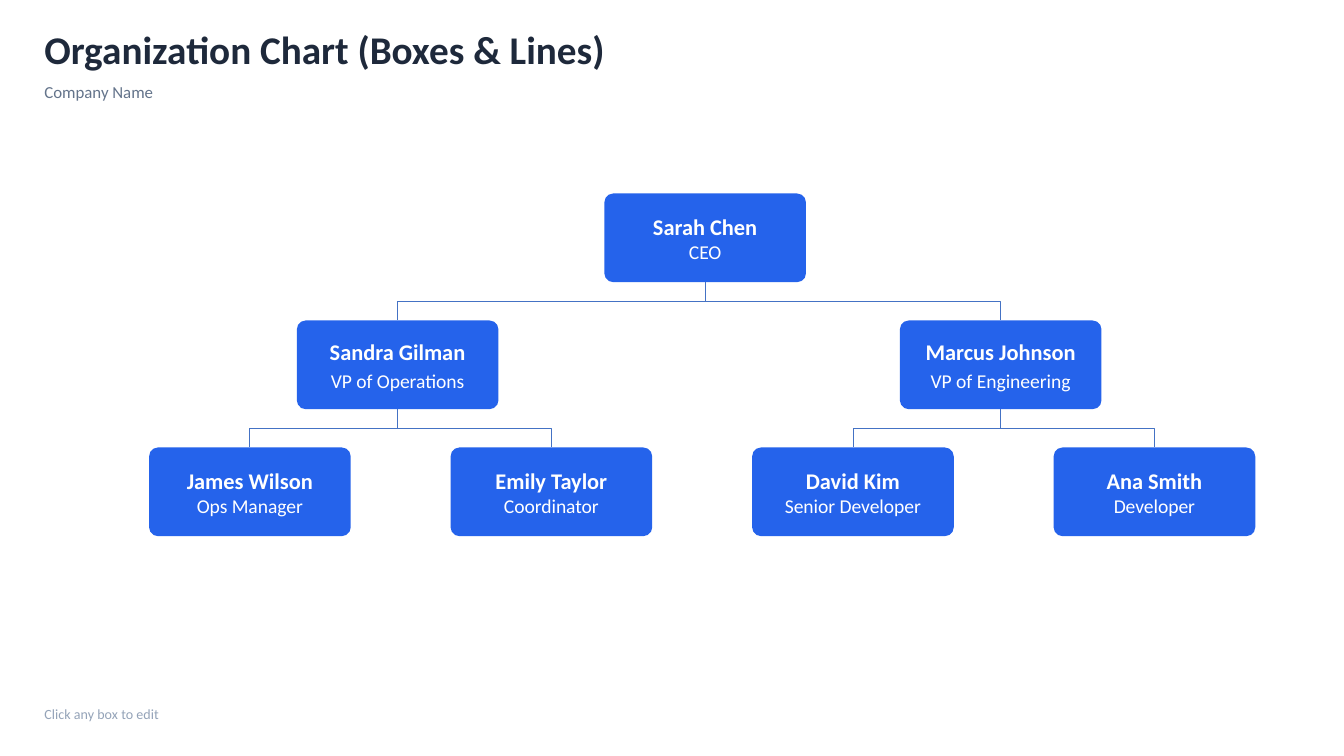
from copy import deepcopy
from dataclasses import dataclass

from lxml import etree
from pptx import Presentation
from pptx import util as u
from pptx.dml.color import RGBColor
from pptx.enum import shapes, text
from pptx.oxml.ns import qn


@dataclass(frozen=True)
class Theme:
    font: str = "Calibri"
    title: str = "1E293B"
    subtitle: str = "64748B"
    note: str = "94A3B8"
    box: str = "2563EB"
    box_text: str = "FFFFFF"
    line: str = "4472C4"
    title_size: float = 21
    subtitle_size: float = 9
    note_size: float = 7.5
    name_size: float = 12
    role_size: float = 10.5
    line_width: float = 0.5


@dataclass(frozen=True)
class Box:
    left: float
    top: float
    width: float
    height: float

    def emu(self):
        return [u.Inches(n) for n in (self.left, self.top, self.width, self.height)]


@dataclass(frozen=True)
class Person:
    name: str
    role: str
    column: float
    reports: tuple = ()


THEME = Theme()
SLIDE = Box(0, 0, 10, 10 * 9 / 16)
MARGIN = 0.33
CHART = Box(1.11, 1.44, 8.23, 2.55)
CARD_WIDTH, CARD_HEIGHT = 1.5, 0.66
COLUMNS, ROWS = 4, 3
MANAGER_SPACING = 14.7

STAFF = Person("Sarah Chen", "CEO", 1.51, (
    Person("Sandra Gilman", "VP of Operations", 0.49, (
        Person("James Wilson", "Ops Manager", 0),
        Person("Emily Taylor", "Coordinator", 1))),
    Person("Marcus Johnson", "VP of Engineering", 2.49, (
        Person("David Kim", "Senior Developer", 2),
        Person("Ana Smith", "Developer", 3)))))


def add_run(paragraph, words, *, size, color, bold=False):
    run = paragraph.add_run()
    run.text = words
    run.font.name = THEME.font
    run.font.size = u.Pt(size)
    run.font.bold = bold
    run.font.color.rgb = RGBColor.from_string(color)
    return run


def add_label(slide, box, words, *, spacing, **format):
    frame = slide.shapes.add_textbox(*box.emu()).text_frame
    frame.word_wrap = True
    frame.margin_left = frame.margin_right = frame.margin_top = frame.margin_bottom = 0
    paragraph = frame.paragraphs[0]
    paragraph.line_spacing = u.Pt(spacing)
    add_run(paragraph, words, **format)


def add_header(slide, box):
    add_label(slide, Box(box.left, box.top, box.width / 2, 0.29),
              "Organization Chart (Boxes & Lines)", spacing=21,
              size=THEME.title_size, color=THEME.title, bold=True)
    add_label(slide, Box(box.left, box.top + 0.33, box.width, 0.17),
              "Company Name", spacing=12.6,
              size=THEME.subtitle_size, color=THEME.subtitle)


def add_footer(slide, box):
    add_label(slide, box, "Click any box to edit", spacing=10.5,
              size=THEME.note_size, color=THEME.note)


def add_card(slide, box, person, spacing=None):
    card = slide.shapes.add_shape(shapes.MSO_SHAPE.ROUNDED_RECTANGLE, *box.emu())
    card.adjustments[0] = 0.1
    card.shadow.inherit = False
    card.fill.solid()
    card.fill.fore_color.rgb = RGBColor.from_string(THEME.box)
    card.line.fill.background()
    card.text_frame.word_wrap = True
    card.text_frame.vertical_anchor = text.MSO_ANCHOR.MIDDLE
    paragraph = card.text_frame.paragraphs[0]
    paragraph.alignment = text.PP_ALIGN.CENTER
    if spacing:
        paragraph.line_spacing = u.Pt(spacing)
        paragraph.space_after = u.Pt(3)
    name = add_run(paragraph, person.name, size=THEME.name_size,
                   color=THEME.box_text, bold=True)
    paragraph.add_line_break()
    # The break takes the name's format, so that it does not heighten the line.
    paragraph._p[-1].append(deepcopy(name._r.rPr))
    add_run(paragraph, person.role, size=THEME.role_size, color=THEME.box_text)
    return card


def join_cards(slide, upper, lower):
    """Draw a down-across-down elbow from the upper card to the lower one."""
    start_x, start_y = upper.left + upper.width // 2, upper.top + upper.height
    end_x, end_y = lower.left + lower.width // 2, lower.top
    elbow = slide.shapes.add_connector(shapes.MSO_CONNECTOR.ELBOW,
                                       start_x, start_y, end_x, end_y)
    elbow.begin_connect(upper, 2)
    elbow.end_connect(lower, 0)
    # A preset elbow leaves sideways: turn it about its centre to leave downwards.
    elbow.width, elbow.height = end_y - start_y, abs(end_x - start_x)
    elbow.left = (start_x + end_x - elbow.width) // 2
    elbow.top = (start_y + end_y - elbow.height) // 2
    to_right = end_x > start_x
    properties = elbow._element.spPr
    transform = properties.find(qn("a:xfrm"))
    transform.set("rot", str((270 if to_right else 90) * 60000))
    transform.set("flipH", str(int(to_right)))
    transform.set("flipV", "0")
    elbow.line.color.rgb = RGBColor.from_string(THEME.line)
    elbow.line.width = u.Pt(THEME.line_width)
    etree.SubElement(properties, qn("a:effectLst"))


def add_branch(slide, box, person, row=0):
    """Place a person's card on the grid of the box, and all reports below it."""
    column_step = (box.width - CARD_WIDTH) / (COLUMNS - 1)
    row_step = (box.height - CARD_HEIGHT) / (ROWS - 1)
    place = Box(box.left + person.column * column_step, box.top + row * row_step,
                CARD_WIDTH, CARD_HEIGHT)
    card = add_card(slide, place, person, MANAGER_SPACING if row == 1 else None)
    for report in person.reports:
        join_cards(slide, card, add_branch(slide, box, report, row + 1))
    return card


def main():
    presentation = Presentation()
    presentation.slide_width = u.Inches(SLIDE.width)
    presentation.slide_height = u.Inches(SLIDE.height)
    slide = presentation.slides.add_slide(presentation.slide_layouts[6])
    text_width = 9.52
    add_header(slide, Box(MARGIN, 0.25, text_width, 0.5))
    add_branch(slide, CHART, STAFF)
    add_footer(slide, Box(MARGIN, 5.23, text_width, 0.15))
    presentation.save("out.pptx")


if __name__ == "__main__":
    main()
